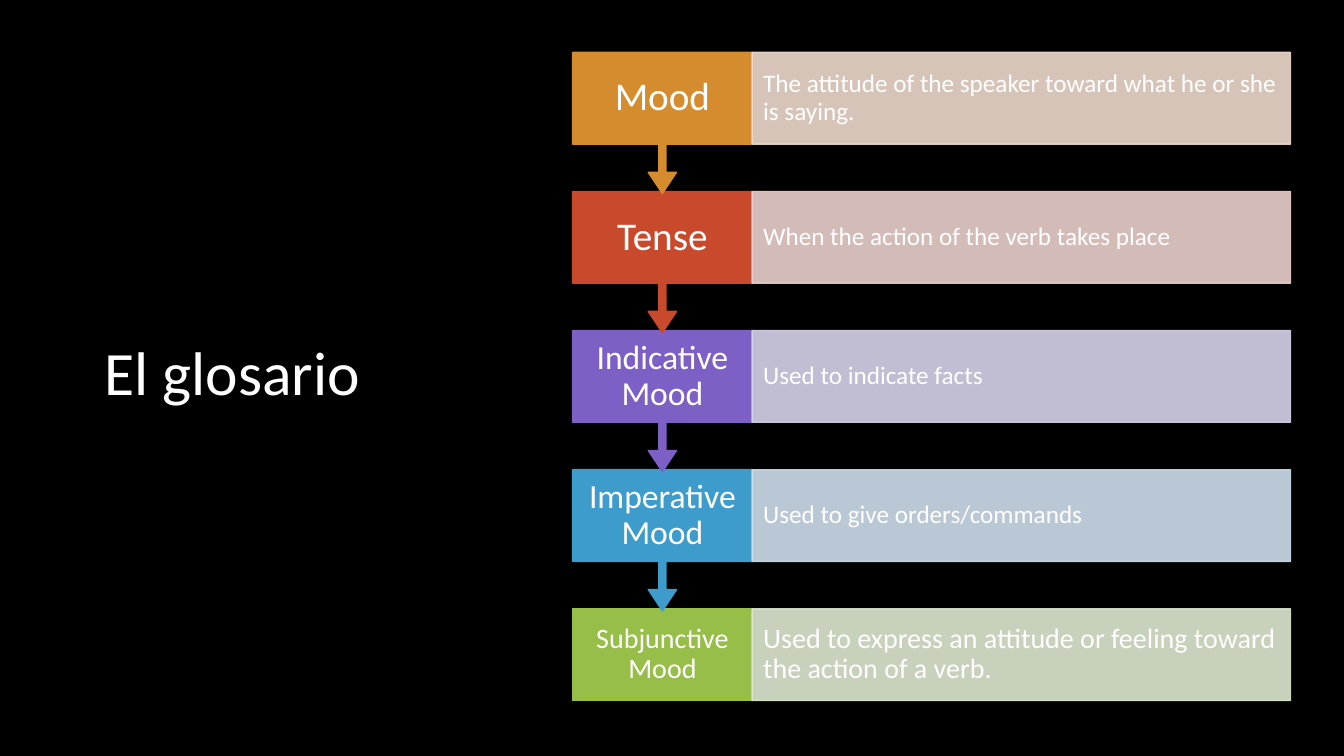
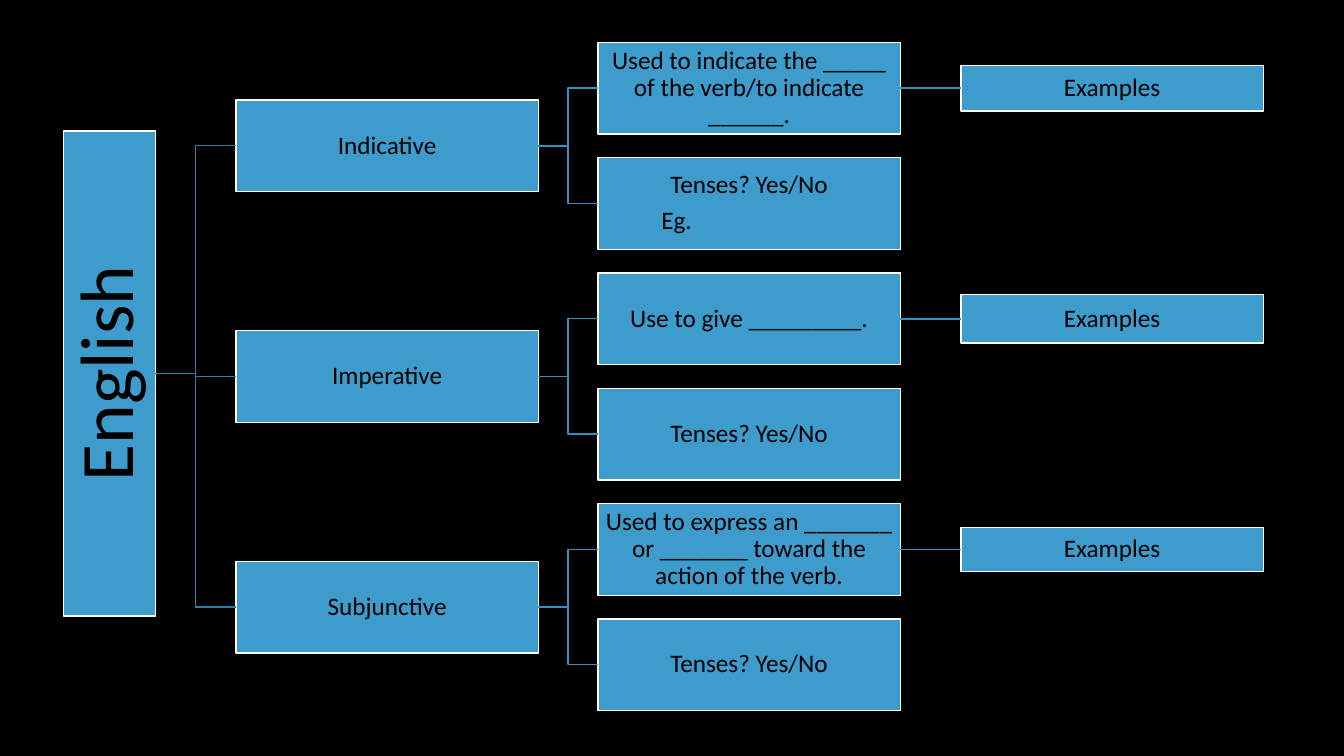
from dataclasses import dataclass
from typing import Optional

from lxml.etree import SubElement
from pptx import Presentation
from pptx.dml.color import RGBColor
from pptx.enum.shapes import MSO_CONNECTOR as Connector, MSO_SHAPE as Preset
from pptx.enum.text import MSO_ANCHOR as Anchor, PP_ALIGN as Align
from pptx.oxml.ns import qn
from pptx.shapes.autoshape import Shape
from pptx.slide import Slide
from pptx.util import Inches, Pt

# Shared style
FONT = "Calibri"
COLORS = {
    "background": "000000",
    "light_text": "FFFFFF",
    "dark_text": "000000",
    "node": "3D9CCC",
    "node_border": "FFFFFF",
    "root_line": "317DA3",
    "branch_line": "378EB9",
    "mood": "D58C2E",
    "mood_tint": "EFDACD",
    "tense": "C9492C",
    "tense_tint": "EBD0CD",
    "indicative": "7C60C6",
    "indicative_tint": "D7D2EA",
    "imperative": "3D9CCC",
    "imperative_tint": "CEDEEC",
    "subjunctive": "97BE49",
    "subjunctive_tint": "DDE8D0",
}
BOX_HEIGHT = 0.91

# Glossary layout
TERM_LEFT, TERM_WIDTH = 5.68, 1.78
DEFINITION_WIDTH = 5.34
GLOSSARY_TOP, GLOSSARY_PITCH = 0.52, 1.38
CALLOUT_HEIGHT = 1.4

# Tree layout
BRANCH_LEFT, LEAF_LEFT, EXAMPLE_LEFT = 2.34, 5.93, 9.53
NODE_WIDTH = 3
FIRST_LEAF_TOP, LAST_LEAF_TOP = 0.42, 6.14


@dataclass(frozen=True)
class Box:
    left: float
    top: float
    width: float
    height: float


@dataclass(frozen=True)
class TextStyle:
    size: int
    color: str
    align: Align = Align.CENTER
    inset: float = 0.01


@dataclass(frozen=True)
class Line:
    text: str
    indent: Optional[float] = None


@dataclass(frozen=True)
class Entry:
    term: str
    term_size: int
    definition: str
    definition_size: int
    color: str


@dataclass(frozen=True)
class Branch:
    name: str
    use: str
    tenses: tuple[Line, ...]
    example_height: float


ENTRIES = (
    Entry("Mood", 28, "The attitude of the speaker toward what he or she is saying.", 18, "mood"),
    Entry("Tense", 28, "When the action of the verb takes place", 18, "tense"),
    Entry("Indicative Mood", 24, "Used to indicate facts", 18, "indicative"),
    Entry("Imperative Mood", 24, "Used to give orders/commands", 18, "imperative"),
    Entry("Subjunctive Mood", 20,
          "Used to express an attitude or feeling toward the action of a verb.", 20, "subjunctive"),
)
TENSES = Line("Tenses? Yes/No")
BRANCHES = (
    Branch("Indicative", "Used to indicate the _____ of the verb/to indicate ______.",
           (TENSES, Line("Eg.", indent=0.62)), 0.45),
    Branch("Imperative", "Use to give _________.", (TENSES,), 0.48),
    Branch("Subjunctive", "Used to express an _______ or _______ toward the action of the verb.",
           (TENSES,), 0.44),
)
NODE_STYLE = TextStyle(18, "dark_text")


def rgb(name: str) -> RGBColor:
    return RGBColor.from_string(COLORS[name])


def add_slide(presentation: Presentation) -> Slide:
    slide = presentation.slides.add_slide(presentation.slide_layouts[6])
    slide.background.fill.solid()
    slide.background.fill.fore_color.rgb = rgb("background")
    return slide


def write(shape: Shape, lines: tuple[Line, ...], style: TextStyle) -> None:
    frame = shape.text_frame
    frame.word_wrap = True
    frame.vertical_anchor = Anchor.MIDDLE
    frame.margin_left = frame.margin_right = Inches(style.inset)
    frame.margin_top = frame.margin_bottom = Inches(0.01)
    for index, line in enumerate(lines):
        paragraph = frame.add_paragraph() if index else frame.paragraphs[0]
        paragraph.alignment = style.align
        paragraph.line_spacing = 0.9
        if index:
            paragraph.space_before = Pt(6)
        if line.indent is not None:
            paragraph.alignment = Align.LEFT
            paragraph._p.get_or_add_pPr().set("marL", str(Inches(line.indent)))
        run = paragraph.add_run()
        run.text = line.text
        run.font.name = FONT
        run.font.size = Pt(style.size)
        run.font.color.rgb = rgb(style.color)


def add_box(slide: Slide, box: Box, fill: str, border: str, preset: Preset = Preset.RECTANGLE) -> Shape:
    shape = slide.shapes.add_shape(
        preset, Inches(box.left), Inches(box.top), Inches(box.width), Inches(box.height))
    shape.shadow.inherit = False
    shape.fill.solid()
    shape.fill.fore_color.rgb = rgb(fill)
    shape.line.color.rgb = rgb(border)
    shape.line.width = Pt(1)
    return shape


def set_opacity(shape: Shape, percent: int) -> None:
    for color in shape._element.spPr.iter(qn("a:srgbClr")):
        SubElement(color, qn("a:alpha")).set("val", str(percent * 1000))


def add_node(slide: Slide, box: Box, *lines: Line) -> Shape:
    shape = add_box(slide, box, "node", "node_border")
    write(shape, lines, NODE_STYLE)
    return shape


def join(slide: Slide, parent: Shape, child: Shape, color: str) -> None:
    """Link the right side of the parent to the left side of the child."""
    start_y = parent.top + parent.height // 2
    end_y = child.top + child.height // 2
    level = abs(start_y - end_y) < Inches(0.01)
    connector = slide.shapes.add_connector(
        Connector.STRAIGHT if level else Connector.ELBOW,
        parent.left + parent.width, start_y, child.left, end_y)
    connector.begin_connect(parent, 3)
    connector.end_connect(child, 1)
    connector.line.color.rgb = rgb(color)
    connector.line.width = Pt(1)
    SubElement(connector._element.spPr, qn("a:effectLst"))


def add_entry(slide: Slide, entry: Entry, top: float, is_last: bool) -> None:
    # Term, with an arrow down to the next one
    height = BOX_HEIGHT if is_last else CALLOUT_HEIGHT
    preset = Preset.RECTANGLE if is_last else Preset.DOWN_ARROW_CALLOUT
    term = add_box(slide, Box(TERM_LEFT, top, TERM_WIDTH, height), entry.color, entry.color, preset)
    if not is_last:
        for index, value in enumerate((0.05, 0.1, 0.15, 0.65)):
            term.adjustments[index] = value
    write(term, (Line(entry.term),), TextStyle(entry.term_size, "light_text", inset=0.13))

    # Definition
    tint = f"{entry.color}_tint"
    box = Box(TERM_LEFT + TERM_WIDTH, top, DEFINITION_WIDTH, BOX_HEIGHT)
    definition = add_box(slide, box, tint, tint)
    set_opacity(definition, 90)
    write(definition, (Line(entry.definition),),
          TextStyle(entry.definition_size, "light_text", Align.LEFT, 0.11))


def build_glossary(presentation: Presentation) -> None:
    slide = add_slide(presentation)
    title = slide.shapes.add_textbox(Inches(0.94), Inches(1.11), Inches(3.74), Inches(5.24))
    write(title, (Line("El glosario"),), TextStyle(44, "light_text", Align.LEFT, 0.1))

    # Bottom row first, so that each arrow tip lies over the next term
    for index, entry in reversed(list(enumerate(ENTRIES))):
        add_entry(slide, entry, GLOSSARY_TOP + index * GLOSSARY_PITCH, index == len(ENTRIES) - 1)


def build_tree(presentation: Presentation) -> None:
    slide = add_slide(presentation)
    root = add_box(slide, Box(0.63, 1.3, BOX_HEIGHT, 4.81), "node", "node_border")
    write(root, (Line("English"),), TextStyle(54, "dark_text", inset=0.04))
    root.text_frame._txBody.bodyPr.set("vert", "vert270")

    leaf_pitch = (LAST_LEAF_TOP - FIRST_LEAF_TOP) / (2 * len(BRANCHES) - 1)
    for index, branch in enumerate(BRANCHES):
        use_top = FIRST_LEAF_TOP + 2 * index * leaf_pitch
        example_top = use_top + (BOX_HEIGHT - branch.example_height) / 2

        name = add_node(slide, Box(BRANCH_LEFT, use_top + leaf_pitch / 2, NODE_WIDTH, BOX_HEIGHT),
                        Line(branch.name))
        use = add_node(slide, Box(LEAF_LEFT, use_top, NODE_WIDTH, BOX_HEIGHT), Line(branch.use))
        tenses = add_node(slide, Box(LEAF_LEFT, use_top + leaf_pitch, NODE_WIDTH, BOX_HEIGHT),
                          *branch.tenses)
        example = add_node(slide, Box(EXAMPLE_LEFT, example_top, NODE_WIDTH, branch.example_height),
                           Line("Examples"))

        join(slide, root, name, "root_line")
        for parent, child in ((name, use), (name, tenses), (use, example)):
            join(slide, parent, child, "branch_line")


def main() -> None:
    presentation = Presentation()
    presentation.slide_width = Inches(13.33)
    presentation.slide_height = Inches(7.5)
    build_glossary(presentation)
    build_tree(presentation)
    presentation.save("out.pptx")


if __name__ == "__main__":
    main()
